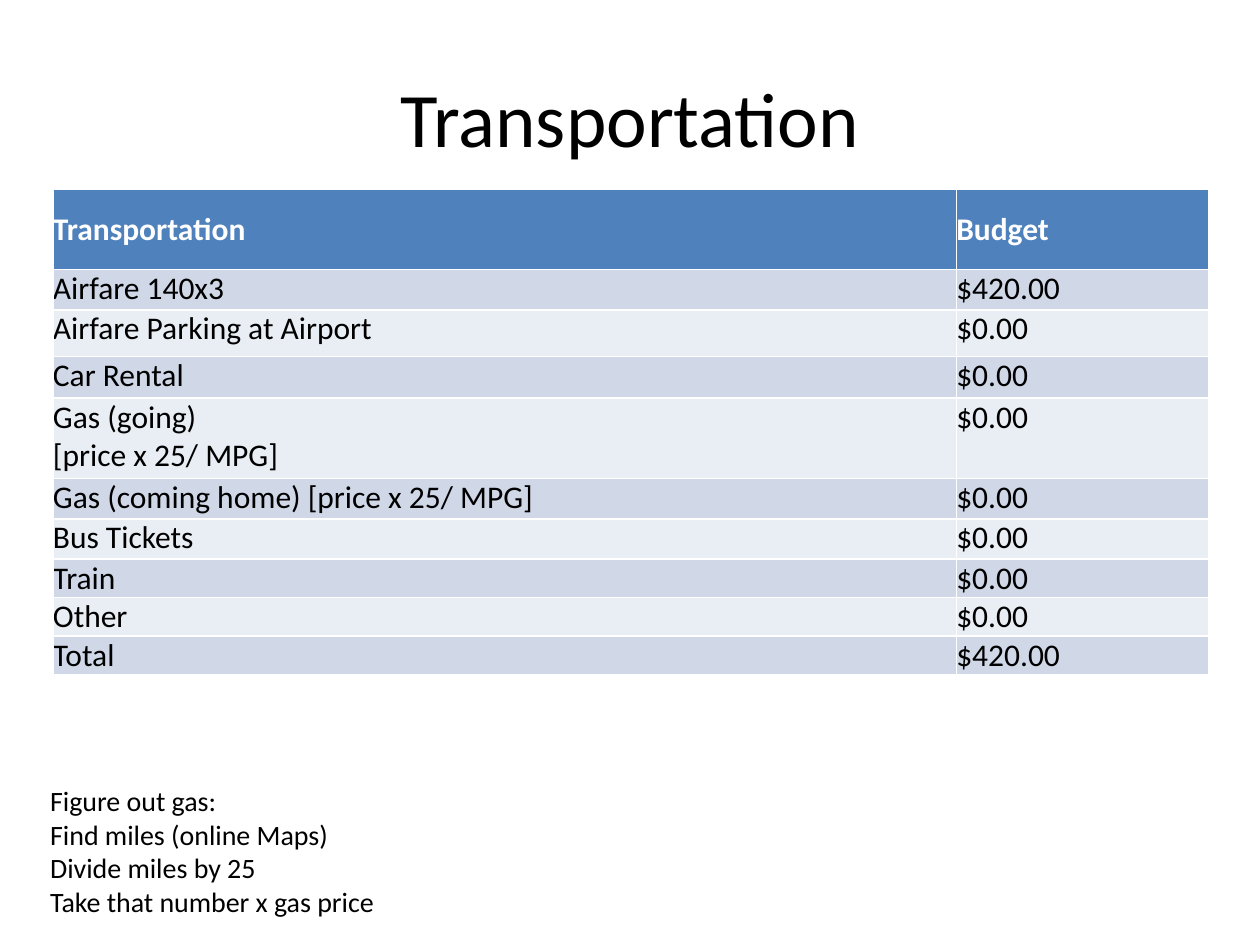
from pptx import Presentation
from pptx.dml.color import RGBColor
from pptx.enum.text import MSO_ANCHOR as Anchor, MSO_AUTO_SIZE as AutoSize, PP_ALIGN as Align
from pptx.util import Inches, Pt

COLORS = {"text": "000000", "header": "4F81BD", "header_text": "FFFFFF",
          "odd": "D0D8E8", "even": "E9EDF4"}
FONT = "Calibri"
TITLE_ONLY = 5

COLUMN_WIDTHS = [7.17, 2]
# Label, amount, row height in inches
BUDGET = [
    ("Transportation", "Budget", 0.64),
    ("Airfare 140x3", "$420.00", 0.32),
    ("Airfare Parking at Airport", "$0.00", 0.37),
    ("Car Rental", "$0.00", 0.33),
    ("Gas (going)\n[price x 25/ MPG]", "$0.00", 0.64),
    ("Gas (coming home) [price x 25/ MPG]", "$0.00", 0.32),
    ("Bus Tickets", "$0.00", 0.32),
    ("Train", "$0.00", 0.22),
    ("Other", "$0.00", 0.22),
    ("Total", "$420.00", 0.22),
]
GAS_STEPS = ["Figure out gas:", "Find miles (online Maps)",
             "Divide miles by 25", "Take that number x gas price"]


def write(frame, text, size, color="text", bold=False, align=Align.LEFT):
    frame.text = text
    for para in frame.paragraphs:
        para.alignment = align
        para.font.name = FONT
        para.font.size = Pt(size)
        para.font.bold = bold
        para.font.color.rgb = RGBColor.from_string(COLORS[color])


def place_title(page, left, top, width, height):
    title = page.shapes.title
    title.left, title.top = Inches(left), Inches(top)
    title.width, title.height = Inches(width), Inches(height)
    title.text_frame.vertical_anchor = Anchor.MIDDLE
    write(title.text_frame, "Transportation", 44, align=Align.CENTER)


def fill_cell(cell, text, row):
    header = row == 0
    cell.margin_left = cell.margin_right = cell.margin_top = cell.margin_bottom = 0
    cell.vertical_anchor = Anchor.MIDDLE if header else Anchor.TOP
    cell.fill.solid()
    band = "header" if header else "odd" if row % 2 else "even"
    cell.fill.fore_color.rgb = RGBColor.from_string(COLORS[band])
    write(cell.text_frame, text, 18, "header_text" if header else "text", header)


def add_budget(page, left, top, width, height):
    # The default table style supplies the white cell borders
    table = page.shapes.add_table(len(BUDGET), len(COLUMN_WIDTHS), Inches(left),
                                  Inches(top), Inches(width), Inches(height)).table
    for column, column_width in zip(table.columns, COLUMN_WIDTHS):
        column.width = Inches(column_width)
    for row, (label, amount, row_height) in enumerate(BUDGET):
        table.rows[row].height = Inches(row_height)
        for column, text in enumerate((label, amount)):
            fill_cell(table.cell(row, column), text, row)


def add_gas_steps(page, left, top, width, height):
    box = page.shapes.add_textbox(Inches(left), Inches(top), Inches(width), Inches(height))
    frame = box.text_frame
    frame.word_wrap = False
    frame.auto_size = AutoSize.SHAPE_TO_FIT_TEXT
    write(frame, "\n".join(GAS_STEPS), 16)


def main():
    deck = Presentation()
    deck.slide_width, deck.slide_height = Inches(10), Inches(7.5)
    page = deck.slides.add_slide(deck.slide_layouts[TITLE_ONLY])
    place_title(page, 0.5, 0.3, 9, 1.25)
    add_budget(page, 0.42, 1.5, sum(COLUMN_WIDTHS), 3.85)
    add_gas_steps(page, 0.3, 6.17, 2.8, 1.18)
    deck.save("out.pptx")


if __name__ == "__main__":
    main()
